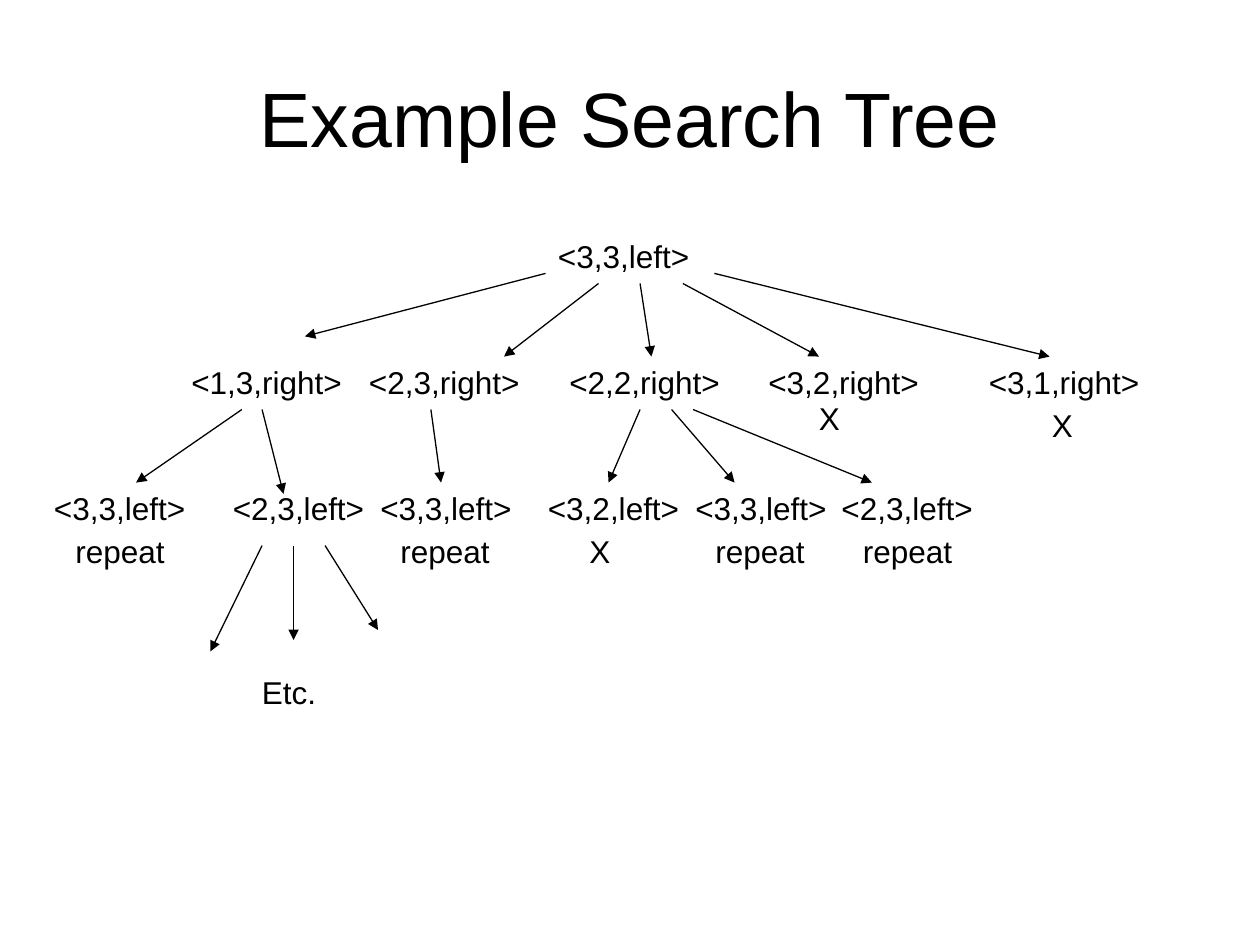
from dataclasses import dataclass

from pptx import Presentation
from pptx import util as u
from pptx.dml.color import RGBColor
from pptx.enum import shapes, text
from pptx.oxml import ns, xmlchemy


@dataclass(frozen=True)
class Theme:
    font: str = "Arial"
    ink: RGBColor = RGBColor(0, 0, 0)
    paper: RGBColor = RGBColor(255, 255, 255)
    title_size: int = 44
    label_size: int = 18
    line_width: float = 0.75


theme = Theme()


def add_run(para, words, size):
    span = para.add_run()
    span.text = words
    span.font.name = theme.font
    span.font.size = u.Pt(size)
    span.font.color.rgb = theme.ink


deck = Presentation()
deck.slide_width, deck.slide_height = u.Inches(10), u.Inches(7.5)
page = deck.slides.add_slide(deck.slide_layouts[5])
page.background.fill.solid()
page.background.fill.fore_color.rgb = theme.paper

# Title
title = page.shapes.title
title.left, title.top = u.Inches(0.5), u.Inches(0.3)
title.width, title.height = u.Inches(9), u.Inches(1.25)
title.text_frame.vertical_anchor = text.MSO_ANCHOR.MIDDLE
title_para = title.text_frame.paragraphs[0]
title_para.alignment = text.PP_ALIGN.CENTER
add_run(title_para, "Example Search Tree", theme.title_size)

# Labels by row: top, box width, then (left, words)
label_rows = [
    (1.83, 1.24, [(4.33, "<3,3,left>")]),
    (2.83, 1.4, [(1.42, "<1,3,right>"), (2.83, "<2,3,right>"), (4.42, "<2,2,right>"),
                 (6, "<3,2,right>"), (7.75, "<3,1,right>")]),
    (3.12, 0.37, [(6.4, "X")]),
    (3.17, 0.37, [(8.25, "X")]),
    (3.83, 1.24, [(0.33, "<3,3,left>"), (1.75, "<2,3,left>"), (2.92, "<3,3,left>"),
                  (4.25, "<3,2,left>"), (5.42, "<3,3,left>"), (6.58, "<2,3,left>")]),
    (4.17, 0.91, [(left, "repeat") for left in (0.5, 3.08, 5.58, 6.75)]),
    (4.17, 0.37, [(4.58, "X")]),
    (5.29, 0.63, [(1.98, "Etc.")]),
]
for top, width, labels in label_rows:
    for left, words in labels:
        box = page.shapes.add_textbox(u.Inches(left), u.Inches(top), u.Inches(width), u.Inches(0.4))
        box.text_frame.word_wrap = False
        box.text_frame.auto_size = text.MSO_AUTO_SIZE.SHAPE_TO_FIT_TEXT
        add_run(box.text_frame.paragraphs[0], words, theme.label_size)

# Arrows from parent to child: start x, start y, end x, end y
arrows = [
    # root to second level
    (4.33, 2.17, 2.42, 2.67),
    (4.75, 2.25, 4, 2.83),
    (5.08, 2.25, 5.17, 2.83),
    (5.42, 2.25, 6.5, 2.83),
    (5.67, 2.17, 8.33, 2.83),
    # second level to third level
    (1.92, 3.25, 1.08, 3.83),
    (2.08, 3.25, 2.25, 3.92),
    (3.42, 3.25, 3.5, 3.83),
    (5.08, 3.25, 4.83, 3.83),
    (5.33, 3.25, 5.83, 3.83),
    (5.5, 3.25, 6.92, 3.83),
    # third level onwards
    (2.08, 4.33, 1.67, 5.17),
    (2.33, 4.33, 2.33, 5.08),
    (2.58, 4.33, 3, 5),
]
for ends in arrows:
    arrow = page.shapes.add_connector(shapes.MSO_CONNECTOR.STRAIGHT, *map(u.Inches, ends))
    arrow.line.color.rgb = theme.ink
    arrow.line.width = u.Pt(theme.line_width)
    head = xmlchemy.OxmlElement("a:tailEnd")
    head.set("type", "triangle")
    arrow.line._get_or_add_ln().append(head)
    properties = arrow._element.find(ns.qn("p:spPr"))
    properties.append(xmlchemy.OxmlElement("a:effectLst"))

deck.save("out.pptx")
